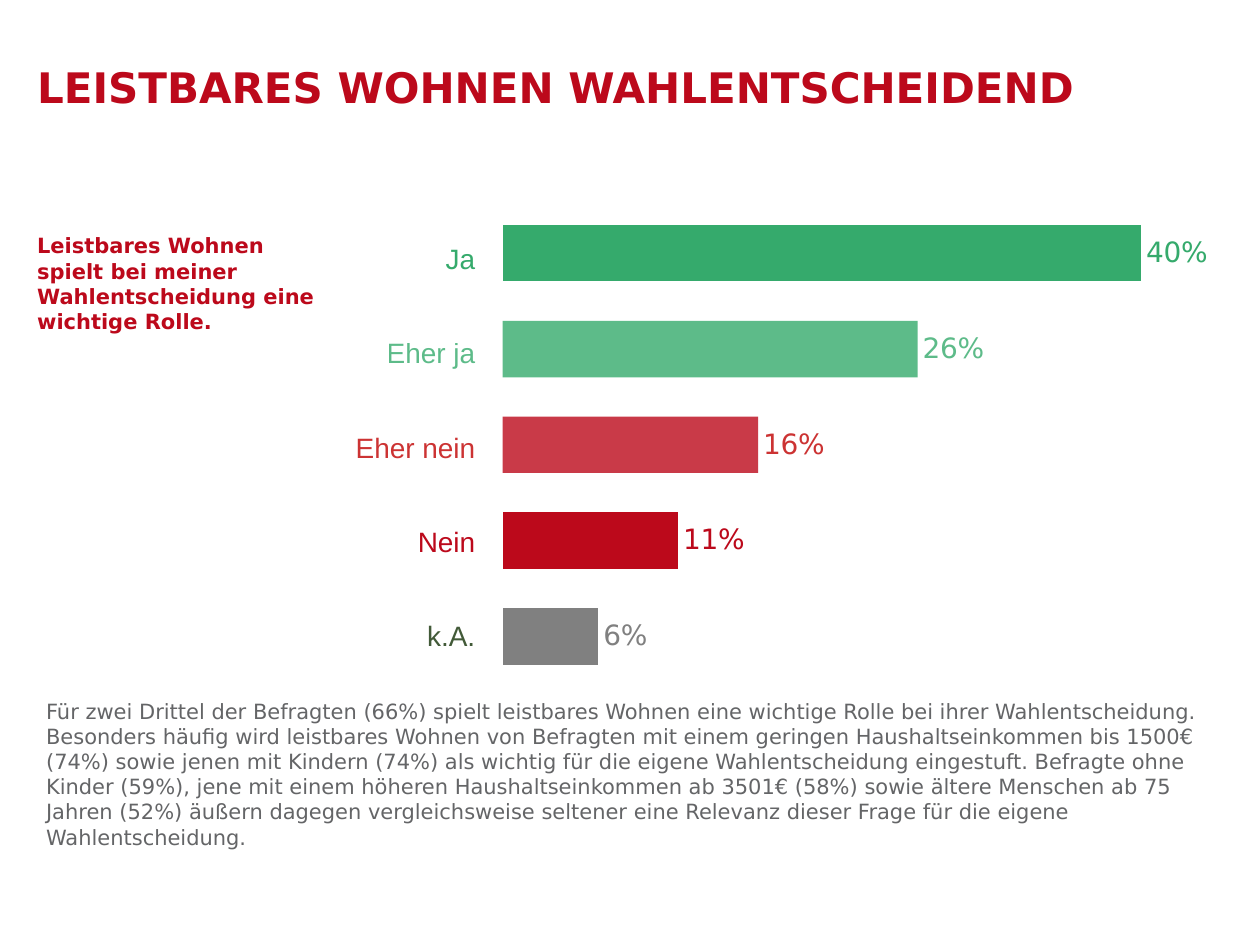
from dataclasses import dataclass

from lxml import etree
from pptx import Presentation
from pptx import util as u
from pptx.chart import data as cd
from pptx.dml import color
from pptx.enum import chart as ch
from pptx.enum import text
from pptx.oxml import ns


@dataclass(frozen=True)
class Theme:
    red: str = "BC091B"
    dark: str = "C00000"
    green: str = "35AA6C"
    olive: str = "425A38"
    grey: str = "808080"
    slate: str = "646567"
    pale_green: str = "5DBB89"
    pale_red: str = "CC3333"
    main: str = "DejaVu Sans"
    side: str = "Arial"
    head: int = 24
    label: int = 16
    body: int = 12


T = Theme()

TITLE = "LEISTBARES WOHNEN WAHLENTSCHEIDEND"
CLAIM = "Leistbares Wohnen spielt bei meiner Wahlentscheidung eine wichtige Rolle."
NOTE = (
    "Für zwei Drittel der Befragten (66%) spielt leistbares Wohnen eine wichtige "
    "Rolle bei ihrer Wahlentscheidung. Besonders häufig wird leistbares Wohnen von "
    "Befragten mit einem geringen Haushaltseinkommen bis 1500€ (74%) sowie jenen mit "
    "Kindern (74%) als wichtig für die eigene Wahlentscheidung eingestuft. Befragte "
    "ohne Kinder (59%), jene mit einem höheren Haushaltseinkommen ab 3501€ (58%) "
    "sowie ältere Menschen ab 75 Jahren (52%) äußern dagegen vergleichsweise seltener "
    "eine Relevanz dieser Frage für die eigene Wahlentscheidung."
)

# Answer, share, text colour, bar colour, label colour, opacity in percent
ROWS = [
    ("Ja", 0.40, T.green, T.green, T.green, 100),
    ("Eher ja", 0.26, T.green, T.green, T.pale_green, 80),
    ("Eher nein", 0.16, T.dark, T.red, T.pale_red, 80),
    ("Nein", 0.11, T.red, T.red, T.red, 100),
    ("k.A.", 0.06, T.olive, T.grey, T.grey, 100),
]


def paint(fill, tint, part=100):
    """Give a fill a solid colour, see-through below 100 percent."""
    fill.solid()
    fill.fore_color.rgb = color.RGBColor.from_string(tint)
    if part < 100:
        solid = fill._xPr.find(ns.qn("a:solidFill"))
        etree.SubElement(solid[0], ns.qn("a:alpha"), val=str(part * 1000))


def style(font, face, size, tint, bold=False, part=100):
    font.name, font.size, font.bold = face, u.Pt(size), bold
    paint(font.fill, tint, part)


def add_box(slide, left, top, width, height):
    box = slide.shapes.add_textbox(u.Cm(left), u.Cm(top), u.Cm(width), u.Cm(height))
    box.text_frame.word_wrap = True
    return box.text_frame


def add_text(slide, place, words, size, tint, bold=False):
    frame = add_box(slide, *place)
    frame.text = words
    style(frame.paragraphs[0].runs[0].font, T.main, size, tint, bold)


def add_names(slide, place):
    """Stack the answers, set flush right beside their bars."""
    frame = add_box(slide, *place)
    for i, (name, _, tint, _, _, part) in enumerate(ROWS):
        para = frame.add_paragraph() if i else frame.paragraphs[0]
        para.text = name
        para.alignment = text.PP_ALIGN.RIGHT
        para.space_after = u.Pt(34.6)
        style(para.runs[0].font, T.side, T.label, tint, part=part)


def fit_plot(chart, left, top, width, height):
    """Fix the inner plot area, in shares of the chart frame."""
    plot = chart._chartSpace.chart.plotArea
    for old in plot.findall(ns.qn("c:layout")):
        plot.remove(old)
    layout = etree.Element(ns.qn("c:layout"))
    inner = etree.SubElement(layout, ns.qn("c:manualLayout"))
    for tag, val in (
        ("layoutTarget", "inner"), ("xMode", "edge"), ("yMode", "edge"),
        ("x", left), ("y", top), ("w", width), ("h", height),
    ):
        etree.SubElement(inner, ns.qn("c:" + tag), val=str(val))
    plot.insert(0, layout)


def add_bars(slide, place):
    rows = ROWS[::-1]  # bars count from the bottom up
    data = cd.CategoryChartData(number_format="0%")
    data.categories = [str(i + 1) for i in range(len(rows))]
    data.add_series("Series 1", [row[1] for row in rows])
    kind = ch.XL_CHART_TYPE.BAR_CLUSTERED
    chart = slide.shapes.add_chart(kind, *map(u.Cm, place), data).chart
    chart.has_legend = chart.has_title = False
    style(chart.font, T.main, 10, T.red)
    fit_plot(chart, 0.02, 0.02, 0.96, 0.96)

    # Axes
    for axis in (chart.category_axis, chart.value_axis):
        axis.has_major_gridlines = False
        axis.visible = False
    chart.value_axis.minimum_scale = 0
    chart.value_axis.maximum_scale = 0.45

    # Bars and their labels
    plot = chart.plots[0]
    plot.gap_width = 70
    plot.vary_by_categories = False
    bars = plot.series[0]
    paint(bars.format.fill, T.red)
    labels = bars.data_labels
    labels.show_value = True
    labels.number_format, labels.number_format_is_linked = "0%", False
    labels.position = ch.XL_LABEL_POSITION.OUTSIDE_END
    style(labels.font, T.main, T.label, T.red)
    for i, (_, _, _, tint, tag, part) in enumerate(rows):
        point = bars.points[i]
        paint(point.format.fill, tint, part)
        style(point.data_label.font, T.main, T.label, tag)
        point.data_label.position = ch.XL_LABEL_POSITION.OUTSIDE_END


def main():
    deck = Presentation()
    deck.slide_width, deck.slide_height = u.Cm(25.4), u.Cm(19.05)
    slide = deck.slides.add_slide(deck.slide_layouts[6])

    # Heading and closing note
    add_text(slide, (0.5, 1.12, 26, 1.28), TITLE, T.head, T.red, True)
    add_text(slide, (0.68, 13.95, 24.02, 5.46), NOTE, T.body, T.slate)

    # Survey result
    add_bars(slide, (9.83, 3.94, 15.09, 10.06))
    add_text(slide, (0.5, 4.57, 6.2, 2.31), CLAIM, T.body, T.red, True)
    add_names(slide, (2.6, 4.75, 7.23, 8.5))

    deck.save("out.pptx")


if __name__ == "__main__":
    main()
